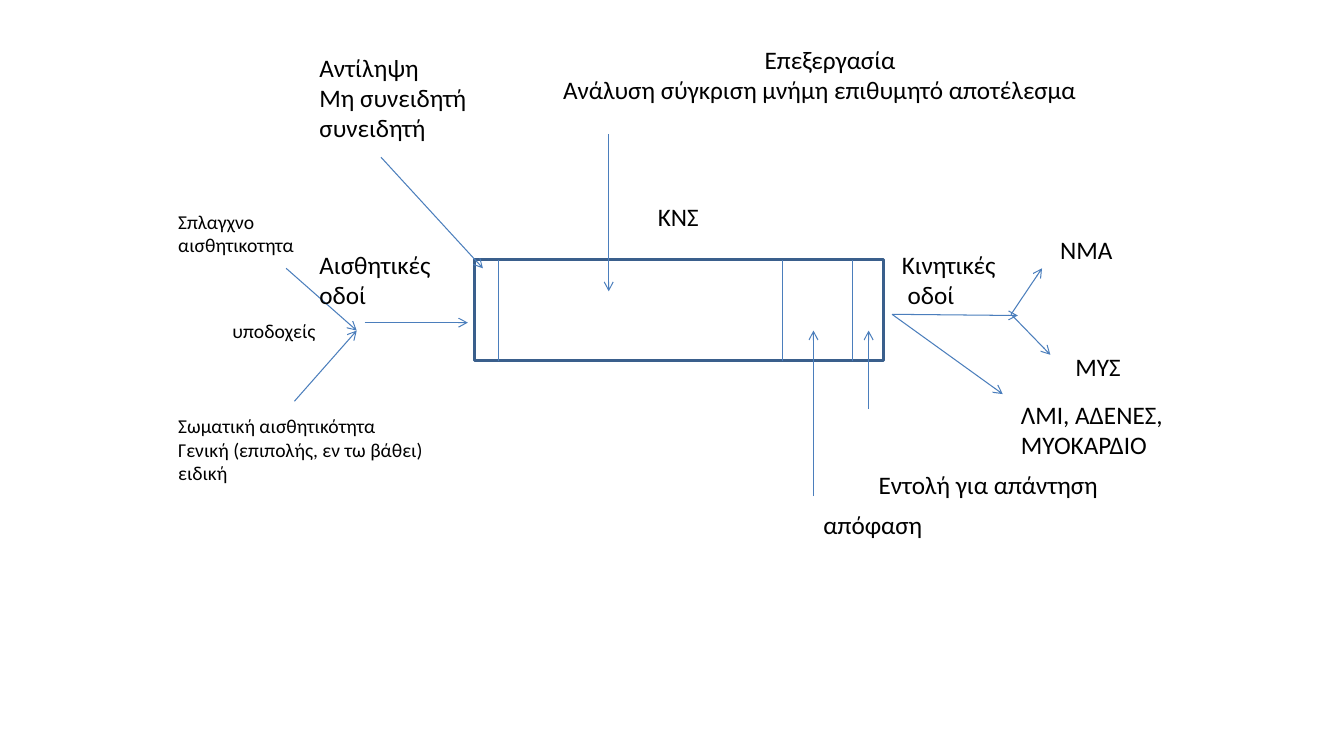
from typing import NamedTuple

from lxml.etree import SubElement
from pptx import Presentation
from pptx.dml.color import RGBColor
from pptx.enum.shapes import MSO_CONNECTOR, MSO_SHAPE
from pptx.enum.text import MSO_AUTO_SIZE
from pptx.oxml.ns import qn
from pptx.slide import Slide
from pptx.util import Cm, Pt

FONT = "Calibri"
BLACK = RGBColor(0x00, 0x00, 0x00)
BOX_BLUE = RGBColor(0x3A, 0x5F, 0x8C)
LINE_BLUE = RGBColor(0x4B, 0x7E, 0xBC)


class Label(NamedTuple):
    text: str
    left: float
    top: float
    width: float
    height: float
    size: int = 18
    first_indent: float = 0
    wrap: bool = False


class Line(NamedTuple):
    x1: float
    y1: float
    x2: float
    y2: float
    arrow: bool = True


# Lengths in centimetres
BOX_LEFT, BOX_TOP, BOX_WIDTH, BOX_HEIGHT = 11.96, 6.55, 10.31, 2.54
DIVIDERS = [
    Line(x, BOX_TOP, x, BOX_TOP + BOX_HEIGHT, arrow=False)
    for x in (12.57, 19.71, 21.49)
]

ARROWS = [
    # Into the central nervous system box
    Line(9.6, 3.96, 12.17, 6.76),
    Line(15.34, 3.38, 15.34, 7.34),
    Line(20.5, 12.5, 20.5, 8.33),
    Line(21.89, 10.31, 21.89, 8.33),
    # Sensory side
    Line(7.21, 6.76, 8.99, 8.33),
    Line(7.42, 10.11, 8.99, 8.33),
    Line(9.19, 8.13, 11.79, 8.13),
    # Motor side
    Line(22.48, 7.92, 25.65, 7.95),
    Line(25.48, 7.92, 26.26, 6.76),
    Line(25.48, 7.92, 26.47, 8.94),
    Line(22.48, 7.92, 25.27, 9.93),
]

LABELS = [
    Label("ΚΝΣ", 16.33, 4.95, 1.55, 1.02),
    Label("Αντίληψη\nΜη συνειδητή\nσυνειδητή", 7.8, 1.19, 4.27, 2.57),
    Label("Επεξεργασία\nΑνάλυση σύγκριση μνήμη επιθυμητό αποτέλεσμα",
          13.94, 0.99, 13.59, 1.8, first_indent=5.08),
    Label("απόφαση", 20.5, 12.7, 3.05, 1.02),
    Label("Εντολή για απάντηση", 21.89, 11.71, 6.25, 1.02),
    Label("Αισθητικές\nοδοί", 7.8, 6.15, 3.48, 1.8),
    Label("Κινητικές\n οδοί", 22.48, 6.15, 2.9, 1.8),
    Label("ΝΜΑ", 26.47, 5.77, 1.85, 1.02),
    Label("ΜΥΣ", 26.85, 8.74, 1.68, 1.02),
    Label("υποδοχείς", 5.61, 7.92, 2.62, 0.86, size=14),
    Label("Σπλαγχνο\nαισθητικοτητα", 4.24, 5.16, 3.76, 1.45, size=14, wrap=True),
    Label("Σωματική αισθητικότητα\nΓενική (επιπολής, εν τω βάθει)\nειδική",
          4.24, 10.31, 6.73, 2.06, size=14),
    Label("ΛΜΙ, ΑΔΕΝΕΣ,\nΜΥΟΚΑΡΔΙΟ", 25.48, 9.93, 4.11, 2.57),
]


def add_text(slide: Slide, text: str, *, left: float, top: float, width: float,
             height: float, size: int, first_indent: float, wrap: bool) -> None:
    box = slide.shapes.add_textbox(Cm(left), Cm(top), Cm(width), Cm(height))
    frame = box.text_frame
    frame.text = text
    frame.word_wrap = wrap
    frame.auto_size = MSO_AUTO_SIZE.SHAPE_TO_FIT_TEXT
    for paragraph in frame.paragraphs:
        paragraph.font.name = FONT
        paragraph.font.size = Pt(size)
        paragraph.font.color.rgb = BLACK
    if first_indent:
        properties = frame.paragraphs[0]._p.get_or_add_pPr()
        properties.set("marL", str(Cm(first_indent)))


def add_line(slide: Slide, line: Line) -> None:
    connector = slide.shapes.add_connector(
        MSO_CONNECTOR.STRAIGHT, Cm(line.x1), Cm(line.y1), Cm(line.x2), Cm(line.y2))
    connector.line.color.rgb = LINE_BLUE
    connector.line.width = Pt(0.75)
    if line.arrow:
        SubElement(connector.line._get_or_add_ln(), qn("a:tailEnd"), type="arrow")
    SubElement(connector._element.spPr, qn("a:effectLst"))


def add_nervous_system_box(slide: Slide) -> None:
    shape = slide.shapes.add_shape(
        MSO_SHAPE.RECTANGLE, Cm(BOX_LEFT), Cm(BOX_TOP), Cm(BOX_WIDTH), Cm(BOX_HEIGHT))
    shape.shadow.inherit = False
    shape.fill.background()
    shape.line.color.rgb = BOX_BLUE
    shape.line.width = Pt(2)


def main() -> None:
    presentation = Presentation()
    presentation.slide_width = Cm(33.87)
    presentation.slide_height = Cm(19.05)
    slide = presentation.slides.add_slide(presentation.slide_layouts[6])

    add_nervous_system_box(slide)
    for line in DIVIDERS + ARROWS:
        add_line(slide, line)
    for label in LABELS:
        add_text(slide, **label._asdict())

    presentation.save("out.pptx")


if __name__ == "__main__":
    main()
